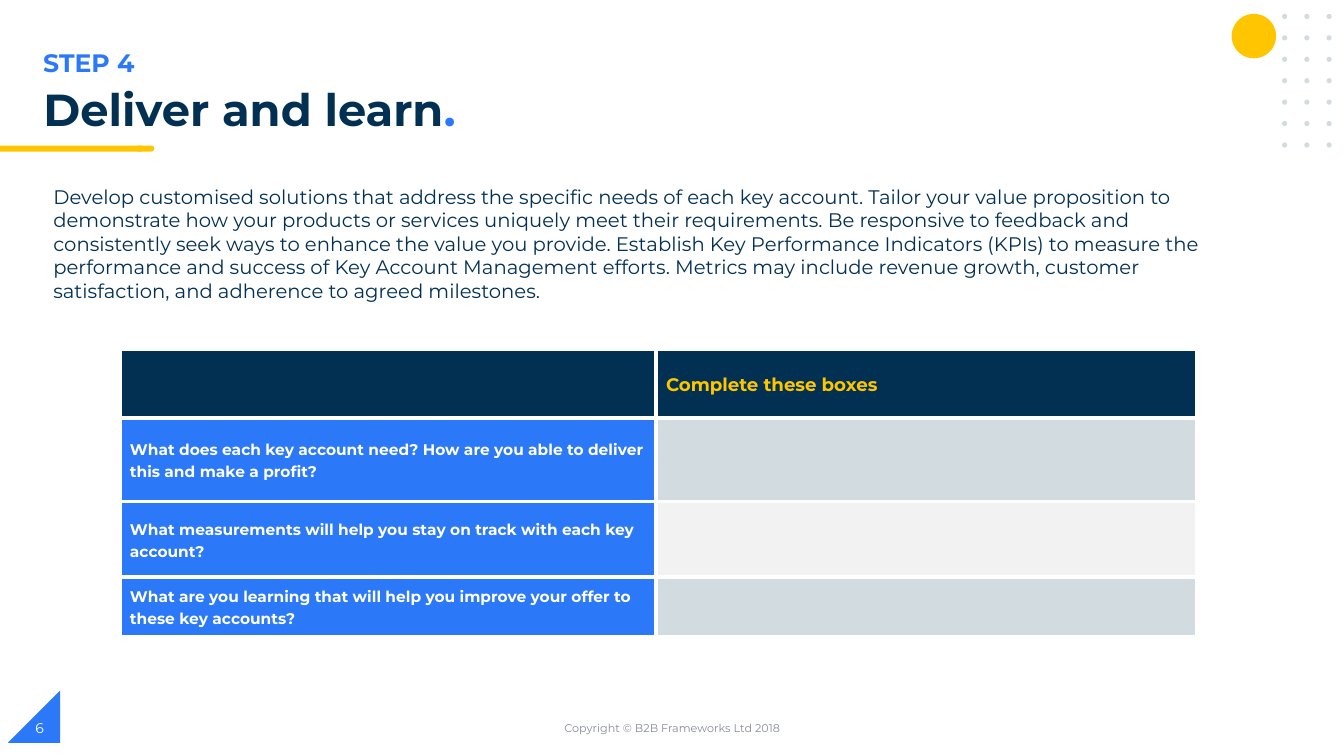
"""Build the "Deliver and learn" step slide with its worksheet table."""
from dataclasses import dataclass

from lxml import etree
from pptx import Presentation
from pptx.dml.color import RGBColor
from pptx.enum import shapes, text
from pptx.oxml.ns import qn
from pptx.util import Cm, Pt


@dataclass(frozen=True)
class Theme:
    font: str = "Montserrat"
    navy: str = "023053"
    blue: str = "2B79F8"
    yellow: str = "FFC600"
    mist: str = "D1DBE0"
    pale: str = "F2F2F2"
    grey: str = "888C97"
    white: str = "FFFFFF"
    title: int = 32
    step: int = 18
    body: int = 14
    header: int = 13
    cell: int = 11
    number: int = 10
    footer: int = 8
    border: int = 3


T = Theme()
STEP = "STEP 4"
TITLE = ("Deliver and learn", ".")
BODY = (
    "Develop customised solutions that address the specific needs of each key account. "
    "Tailor your value proposition to demonstrate how your products or services uniquely "
    "meet their requirements. Be responsive to feedback and consistently seek ways to "
    "enhance the value you provide. Establish Key Performance Indicators (KPIs) to measure "
    "the performance and success of Key Account Management efforts. Metrics may include "
    "revenue growth, customer satisfaction, and adherence to agreed milestones."
)
HEADER = ("", "Complete these boxes")
QUESTIONS = (
    "What does each key account need? How are you able to deliver this and make a profit?",
    "What measurements will help you stay on track with each key account?",
    "What are you learning that will help you improve your offer to these key accounts?",
)
COPYRIGHT = "Copyright © B2B Frameworks Ltd 2018"
PAGE = "6"

COLUMNS = (13.51, 13.64)
ROWS = (1.73, 2.11, 1.9, 1.5)
TABLE_AT = (3.02, 8.8)
DOT_COLUMNS, DOT_ROWS, DOT_SIZE = 3, 7, 0.13
DOT_AT, DOT_STEP = (32.31, 0.35), (0.56, 0.54)


def rgb(value):
    return RGBColor.from_string(value)


def style(p, size, color, bold=False):
    f = p.font
    f.name, f.size, f.bold = T.font, Pt(size), bold
    f.color.rgb = rgb(color)


def place(sp, *box):
    sp.left, sp.top, sp.width, sp.height = (Cm(v) for v in box)


def add_shape(slide, kind, box, color):
    sp = slide.shapes.add_shape(kind, *(Cm(v) for v in box))
    sp.shadow.inherit = False
    sp.fill.solid()
    sp.fill.fore_color.rgb = rgb(color)
    sp.line.fill.background()
    return sp


def add_label(slide, words, box, size, color, bold=False,
              align=text.PP_ALIGN.LEFT, anchor=text.MSO_ANCHOR.MIDDLE):
    tf = slide.shapes.add_textbox(*(Cm(v) for v in box)).text_frame
    tf.word_wrap = True
    tf.vertical_anchor = anchor
    p = tf.paragraphs[0]
    p.text, p.alignment = words, align
    style(p, size, color, bold)


def add_decoration(slide):
    kinds = shapes.MSO_SHAPE
    corner = add_shape(slide, kinds.RIGHT_TRIANGLE, (0.2, 17.4, 1.32, 1.32), T.blue)
    corner._element.spPr.find(qn("a:xfrm")).set("flipH", "1")
    add_shape(slide, kinds.FLOWCHART_TERMINATOR, (3.41, 3.67, 0.48, 0.15), T.yellow)
    add_shape(slide, kinds.RECTANGLE, (0, 3.67, 3.58, 0.15), T.yellow)
    add_shape(slide, kinds.OVAL, (31.04, 0.35, 1.12, 1.12), T.yellow)
    for i in range(DOT_COLUMNS * DOT_ROWS):
        row, col = divmod(i, DOT_COLUMNS)
        x, y = DOT_AT[0] + col * DOT_STEP[0], DOT_AT[1] + row * DOT_STEP[1]
        add_shape(slide, kinds.OVAL, (x, y, DOT_SIZE, DOT_SIZE), T.mist)


def fill_placeholders(slide):
    title, body = slide.placeholders
    place(title, 0.84, 2.08, 19.35, 1.42)
    place(body, 1.09, 4.52, 30.25, 3.25)
    for sp in (title, body):
        tf = sp.text_frame
        tf.word_wrap = True
        tf.auto_size = text.MSO_AUTO_SIZE.NONE
        tf.vertical_anchor = text.MSO_ANCHOR.TOP
        p = tf.paragraphs[0]
        p.alignment = text.PP_ALIGN.LEFT
        p.space_before = Pt(0)

    p = title.text_frame.paragraphs[0]
    p.line_spacing = 0.9
    for words in TITLE:
        r = p.add_run()
        r.text = words
    style(p, T.title, T.navy, True)
    r.font.color.rgb = rgb(T.blue)

    p = body.text_frame.paragraphs[0]
    p.text = BODY
    pr = p._p.get_or_add_pPr()
    pr.set("marL", "0")
    pr.set("indent", "0")
    etree.SubElement(pr, qn("a:buNone"))
    style(p, T.body, T.navy)


def add_borders(cell):
    pr = cell._tc.get_or_add_tcPr()
    for i, side in enumerate(("lnL", "lnR", "lnT", "lnB")):
        ln = etree.Element(qn(f"a:{side}"), w=str(Pt(T.border)))
        fill = etree.SubElement(ln, qn("a:solidFill"))
        etree.SubElement(fill, qn("a:srgbClr"), val=T.white)
        pr.insert(i, ln)


def add_worksheet(slide):
    box = (*TABLE_AT, sum(COLUMNS), sum(ROWS))
    table = slide.shapes.add_table(len(ROWS), len(COLUMNS), *(Cm(v) for v in box)).table
    for col, width in zip(table.columns, COLUMNS):
        col.width = Cm(width)
    for row, height in zip(table.rows, ROWS):
        row.height = Cm(height)
    content = [HEADER] + [(question, "") for question in QUESTIONS]
    for i, row in enumerate(content):
        band = T.mist if i % 2 else T.pale
        fills = (T.blue, band) if i else (T.navy, T.navy)
        size, color = (T.cell, T.white) if i else (T.header, T.yellow)
        for j, words in enumerate(row):
            cell = table.cell(i, j)
            cell.fill.solid()
            cell.fill.fore_color.rgb = rgb(fills[j])
            add_borders(cell)
            cell.margin_top = cell.margin_bottom = 0
            cell.vertical_anchor = text.MSO_ANCHOR.MIDDLE
            p = cell.text_frame.paragraphs[0]
            p.text, p.line_spacing = words, 1.15
            style(p, size, color, True)


def main():
    prs = Presentation()
    prs.slide_width, prs.slide_height = Cm(33.87), Cm(19.05)
    slide = prs.slides.add_slide(prs.slide_layouts[1])
    add_decoration(slide)
    add_label(slide, STEP, (0.84, 1.07, 17, 1.02), T.step, T.blue, True,
              anchor=text.MSO_ANCHOR.TOP)
    fill_placeholders(slide)
    add_worksheet(slide)
    add_label(slide, COPYRIGHT, (11.23, 17.83, 11.43, 1.02), T.footer, T.grey,
              align=text.PP_ALIGN.CENTER)
    add_label(slide, PAGE, (0.64, 17.83, 7.62, 1.02), T.number, T.white)
    prs.save("out.pptx")


if __name__ == "__main__":
    main()
